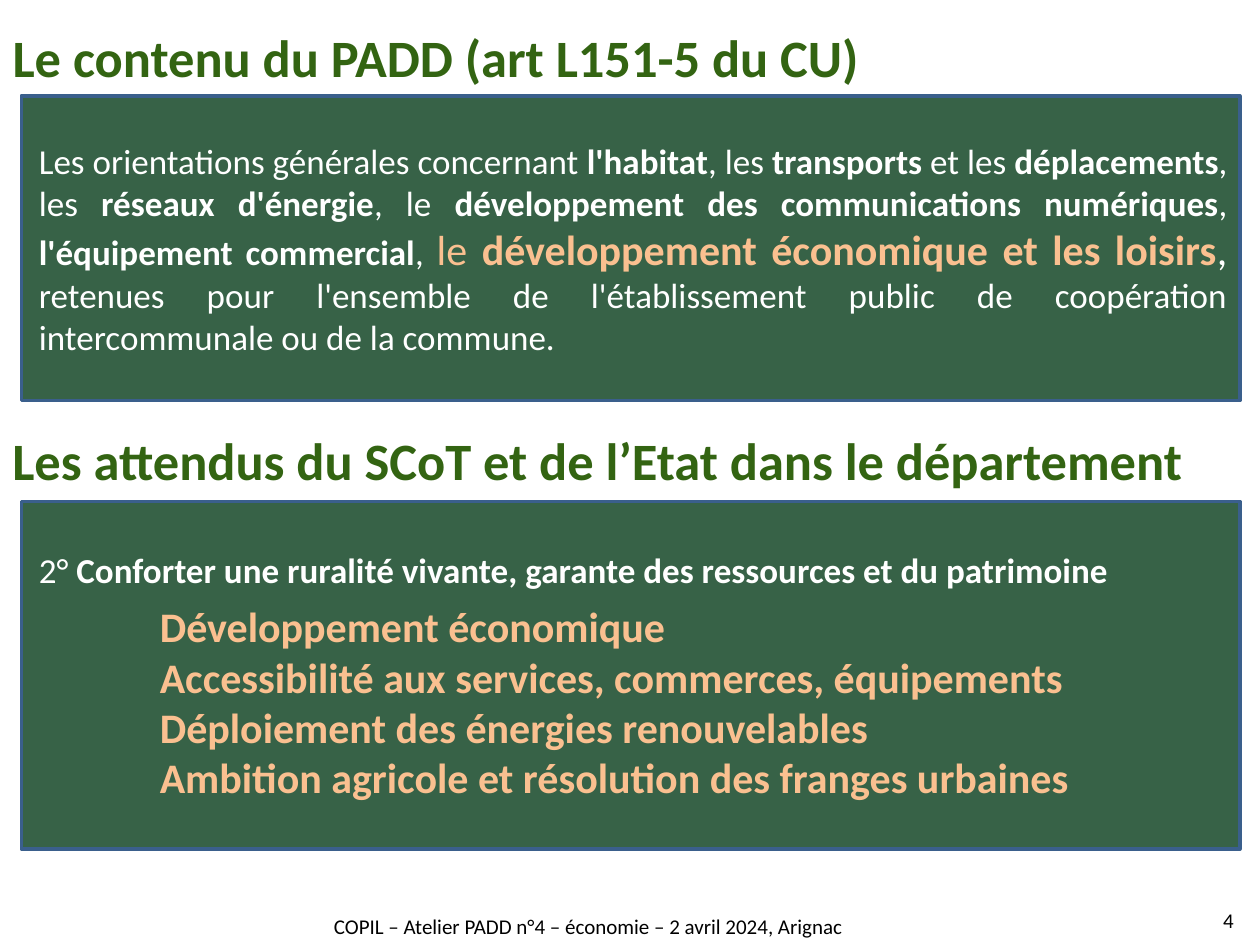
from pptx import Presentation
from pptx.dml.color import RGBColor
from pptx.enum import shapes, text
from pptx.util import Pt

GREEN, PANEL, BORDER = "336412", "376247", "3A5F8C"
WHITE, BLACK, PEACH = "FFFFFF", "000000", "FAC090"
LEFT, CENTER, RIGHT, JUSTIFY = (
    text.PP_ALIGN.LEFT, text.PP_ALIGN.CENTER, text.PP_ALIGN.RIGHT, text.PP_ALIGN.JUSTIFY)

ORIENTATIONS = [
    ("Les orientations générales concernant ", {}),
    ("l'habitat", {"bold": True}),
    (", les ", {}),
    ("transports", {"bold": True}),
    (" et les ", {}),
    ("déplacements", {"bold": True}),
    (", les ", {}),
    ("réseaux d'énergie", {"bold": True}),
    (", le ", {}),
    ("développement des communications numériques", {"bold": True}),
    (", ", {}),
    ("l'équipement commercial", {"bold": True}),
    (", ", {}),
    ("le ", {"size": 24, "color": PEACH}),
    ("développement économique et les loisirs", {"size": 24, "color": PEACH, "bold": True}),
    (",", {"size": 24}),
    (" retenues pour l'ensemble de l'établissement public de coopération "
     "intercommunale ou de la commune.", {}),
]
AXIS = [
    ("2° ", {}),
    ("Conforter une ruralité vivante, garante des ressources et du patrimoine", {"bold": True}),
]
EXPECTATIONS = [
    "Développement économique",
    "Accessibilité aux services, commerces, équipements",
    "Déploiement des énergies renouvelables",
    "Ambition agricole et résolution des franges urbaines",
]


def rgb(value):
    return RGBColor.from_string(value)


def add_run(paragraph, content, size=20, color=WHITE, bold=False):
    run = paragraph.add_run()
    run.text = content
    run.font.name = "Calibri"
    run.font.size = Pt(size)
    run.font.bold = bold
    run.font.color.rgb = rgb(color)


def format_paragraph(paragraph, runs, align=LEFT, indent=0, space=0, level=0):
    paragraph.alignment = align
    paragraph.level = level
    paragraph.space_before = paragraph.space_after = Pt(space)
    properties = paragraph._p.get_or_add_pPr()
    properties.set("marL", str(Pt(indent)))
    properties.set("indent", "0")
    for content, style in runs:
        add_run(paragraph, content, **style)


def prepare_frame(shape):
    frame = shape.text_frame
    frame.word_wrap = True
    frame.auto_size = text.MSO_AUTO_SIZE.NONE
    frame.vertical_anchor = text.MSO_ANCHOR.MIDDLE
    return frame


def place(shape, left, top, width, height):
    shape.left, shape.top = Pt(left), Pt(top)
    shape.width, shape.height = Pt(width), Pt(height)


def write_label(shape, content, box, align=LEFT, **style):
    place(shape, *box)
    paragraph = prepare_frame(shape).paragraphs[0]
    format_paragraph(paragraph, [(content, style)], align=align)


def add_textbox(slide):
    return slide.shapes.add_textbox(0, 0, 0, 0)


def add_panel(slide, top, height, lead):
    panel = slide.shapes.add_shape(
        shapes.MSO_SHAPE.RECTANGLE, Pt(12.24), Pt(top), Pt(696.24), Pt(height))
    panel.shadow.inherit = False
    panel.fill.solid()
    panel.fill.fore_color.rgb = rgb(PANEL)
    panel.line.color.rgb = rgb(BORDER)
    panel.line.width = Pt(2)
    frame = prepare_frame(panel)
    format_paragraph(frame.paragraphs[0], lead, align=JUSTIFY, indent=2.88, space=6)
    return frame


def main():
    presentation = Presentation()
    presentation.slide_width, presentation.slide_height = Pt(720), Pt(540)
    slide = presentation.slides.add_slide(presentation.slide_layouts[5])

    heading = {"size": 30, "color": GREEN, "bold": True}
    write_label(slide.shapes.title, "Le contenu du PADD (art L151-5 du CU)",
                (0, 9.36, 692, 45.36), **heading)
    write_label(add_textbox(slide), "Les attendus du SCoT et de l’Etat dans le département",
                (0, 239.76, 692, 45.36), **heading)

    add_panel(slide, 54.72, 174.24, ORIENTATIONS)
    frame = add_panel(slide, 286.56, 198.72, AXIS)
    for expectation in EXPECTATIONS:
        format_paragraph(
            frame.add_paragraph(),
            [(expectation, {"size": 24, "color": PEACH, "bold": True})],
            align=JUSTIFY, indent=72, level=2)

    footer = {"size": 12, "color": BLACK}
    write_label(add_textbox(slide), "COPIL – Atelier PADD n°4 – économie – 2 avril 2024, Arignac",
                (156.24, 514.8, 360, 28.8), align=CENTER, **footer)
    write_label(add_textbox(slide), "4", (666, 511.2, 46.08, 28.8), align=RIGHT, **footer)

    presentation.save("out.pptx")


if __name__ == "__main__":
    main()
